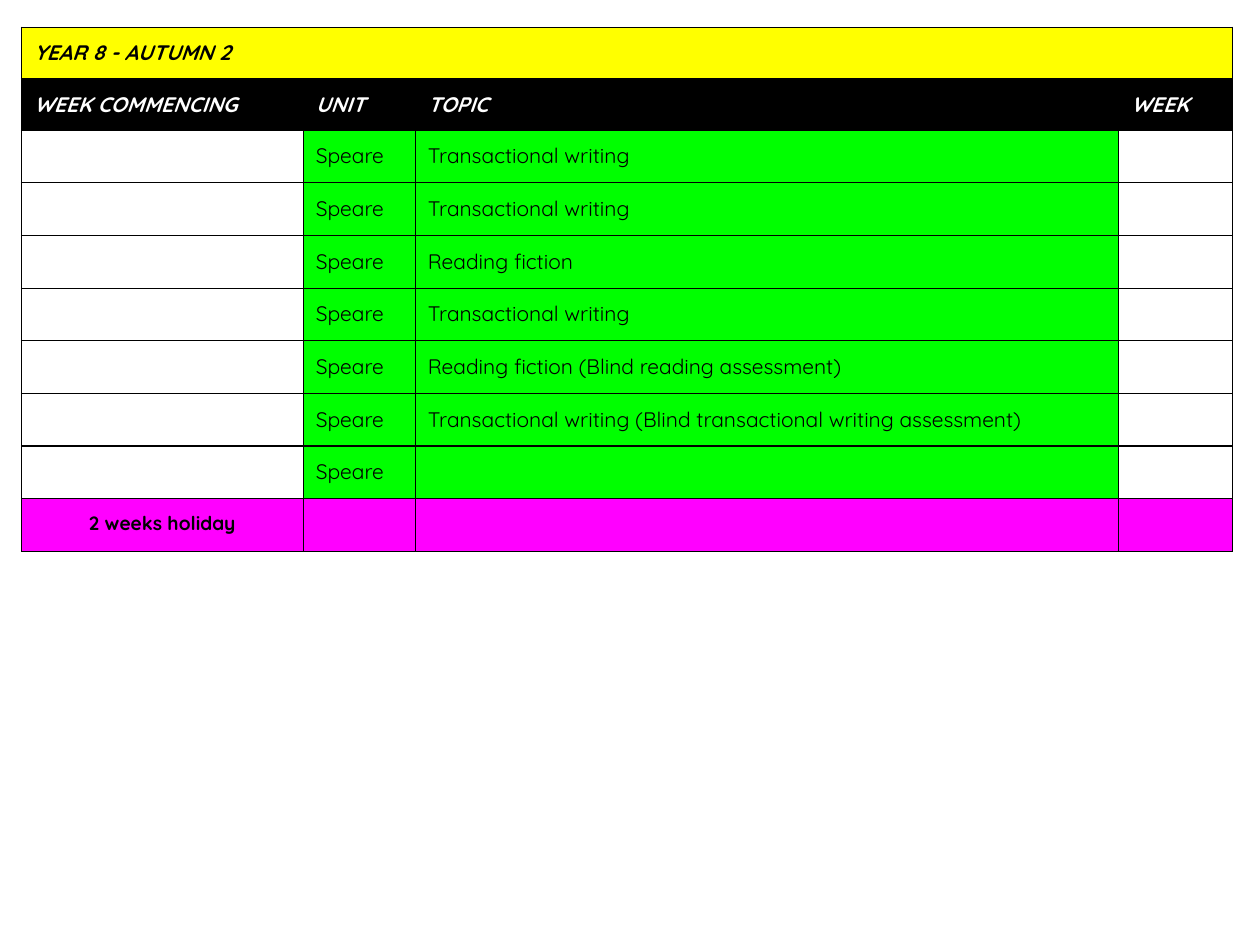
"""Build a half-term curriculum plan slide with one colour-coded table."""
from lxml.etree import SubElement
from pptx import Presentation
from pptx.dml.color import RGBColor
from pptx.enum.text import PP_ALIGN
from pptx.oxml.ns import qn
from pptx.util import Pt

COLORS = {"title": "FFFF00", "header": "000000", "lesson": "00FF00",
          "holiday": "FF00FF", "dark": "000000", "light": "FFFFFF"}
FONT = "Quicksand"
TITLE = "YEAR 8 - AUTUMN 2"
HEADERS = ["WEEK COMMENCING", "UNIT", "TOPIC", "WEEK"]
UNIT = "Speare"
TOPICS = [
    "Transactional writing",
    "Transactional writing",
    "Reading fiction",
    "Transactional writing",
    "Reading fiction (Blind reading assessment)",
    "Transactional writing (Blind transactional writing assessment)",
    "",
]
HOLIDAY = "2 weeks holiday"

LEFT, TOP = 12.3, 15.6
COLUMN_WIDTHS = [161, 64, 402, 65]
HEADING_HEIGHT, ROW_HEIGHT = 29.4, 30.1
PADDING, BORDER = 7.2, 0.75


def add_borders(cell):
    properties = cell._tc.get_or_add_tcPr()
    for position, side in enumerate(("lnL", "lnR", "lnT", "lnB")):
        line = properties.makeelement(qn(f"a:{side}"), {"w": str(Pt(BORDER))})
        properties.insert(position, line)
        fill = SubElement(line, qn("a:solidFill"))
        SubElement(fill, qn("a:srgbClr"), val=COLORS["dark"])


def fill_cell(cell, text, fill=None, color="dark", size=12, bold=False,
              italic=False, align=PP_ALIGN.LEFT):
    cell.margin_left = cell.margin_right = Pt(PADDING)
    cell.margin_top = cell.margin_bottom = Pt(PADDING if text else 0)
    if fill:
        cell.fill.solid()
        cell.fill.fore_color.rgb = RGBColor.from_string(COLORS[fill])
    else:
        cell.fill.background()
    add_borders(cell)
    if not text:
        return
    cell.text_frame.text = text
    paragraph = cell.text_frame.paragraphs[0]
    paragraph.alignment = align
    font = paragraph.runs[0].font
    font.name, font.size, font.bold, font.italic = FONT, Pt(size), bold, italic
    font.color.rgb = RGBColor.from_string(COLORS[color])


def plan_rows():
    heading = {"bold": True, "italic": True}
    holiday = {"fill": "holiday", "size": 11, "bold": True, "align": PP_ALIGN.CENTER}
    rows = [[(text, {"fill": "title", **heading}) for text in (TITLE, "", "", "")]]
    rows.append([(text, {"fill": "header", "color": "light", **heading})
                 for text in HEADERS])
    for topic in TOPICS:
        rows.append([("", {}), (UNIT, {"fill": "lesson"}),
                     (topic, {"fill": "lesson"}), ("", {})])
    rows.append([(text, holiday) for text in (HOLIDAY, "", "", "")])
    return rows


def main():
    deck = Presentation()
    deck.slide_width, deck.slide_height = Pt(720), Pt(540)
    page = deck.slides.add_slide(deck.slide_layouts[6])
    rows = plan_rows()
    heights = [HEADING_HEIGHT] * 2 + [ROW_HEIGHT] * (len(rows) - 2)
    frame = page.shapes.add_table(len(rows), len(COLUMN_WIDTHS), Pt(LEFT), Pt(TOP),
                                  Pt(sum(COLUMN_WIDTHS)), Pt(sum(heights)))
    table = frame.table
    table.first_row = table.horz_banding = False
    for column, width in zip(table.columns, COLUMN_WIDTHS):
        column.width = Pt(width)
    for row, height, contents in zip(table.rows, heights, rows):
        row.height = Pt(height)
        for cell, (text, style) in zip(row.cells, contents):
            fill_cell(cell, text, **style)
    table.cell(0, 0).merge(table.cell(0, len(COLUMN_WIDTHS) - 1))
    deck.save("out.pptx")


if __name__ == "__main__":
    main()
